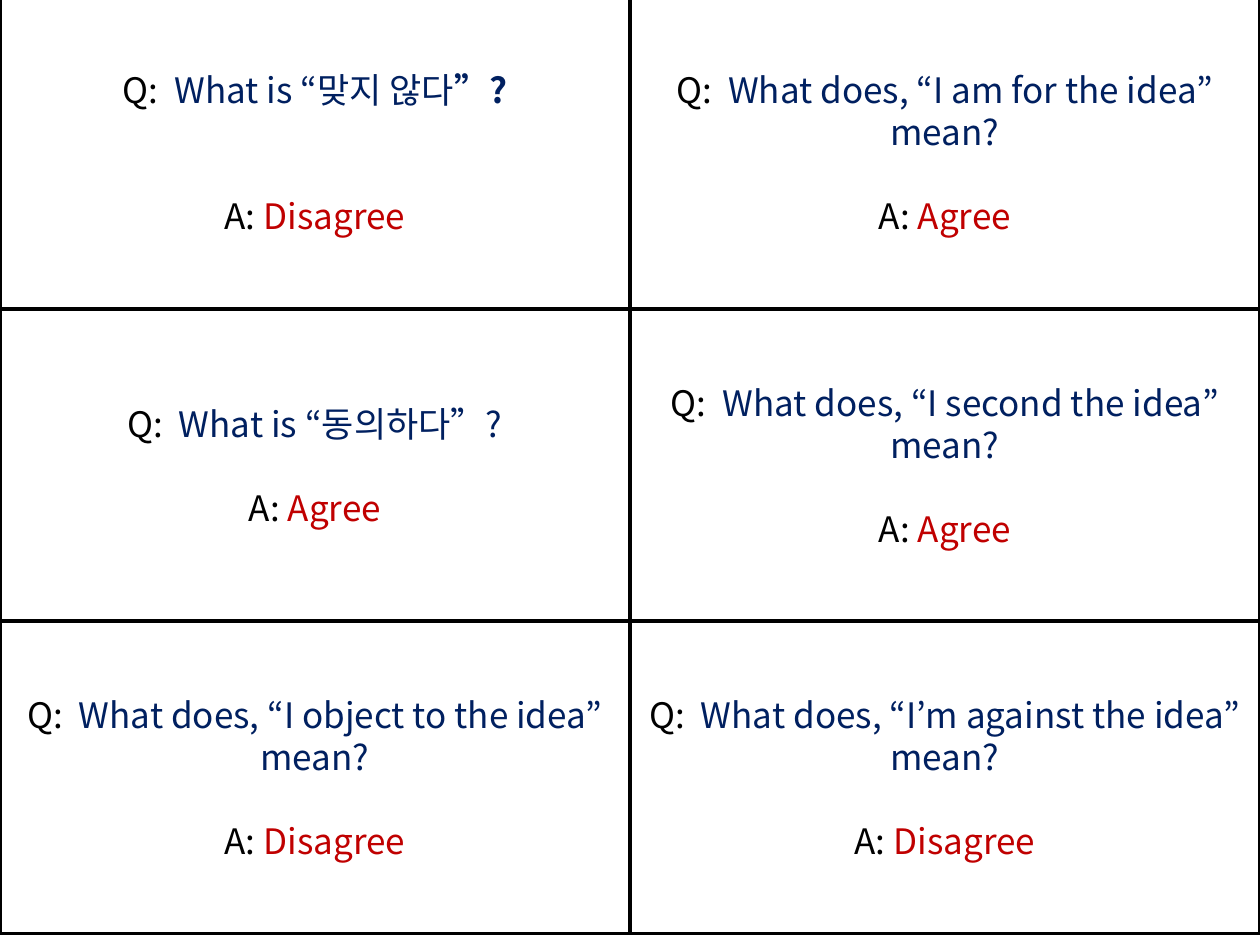
from dataclasses import dataclass

from lxml import etree
from pptx import Presentation
from pptx import util as u
from pptx.dml.color import RGBColor
from pptx.enum import shapes, text
from pptx.oxml import ns


@dataclass(frozen=True)
class Theme:
    font: str = "Noto Sans CJK KR"
    size: int = 20
    pitch: int = 24
    black: str = "000000"
    white: str = "FFFFFF"
    navy: str = "002060"
    red: str = "C00000"


THEME = Theme()
WIDE, HIGH, TOP = 360, 178.5, -2

# Cards by row: question runs (text, bold), answer, empty lines between
CARDS = [
    [([("What is “맞지 않다", False), ("”?", True)], "Disagree", 2),
     ([("What does, “I am for the idea” mean?", False)], "Agree", 1)],
    [([("What is “동의하다”?", False)], "Agree", 1),
     ([("What does, “I second the idea” mean?", False)], "Agree", 1)],
    [([("What does, “I object to the idea” mean?", False)], "Disagree", 1),
     ([("What does, “I’m against the idea” mean?", False)], "Disagree", 1)],
]


def add_run(para, words, color, bold=False):
    run = para.add_run()
    run.text = words
    font = run.font
    font.name, font.size, font.bold = THEME.font, u.Pt(THEME.size), bold
    font.color.rgb = RGBColor.from_string(color)
    # Korean letters take the East Asian font
    east = etree.SubElement(run._r.get_or_add_rPr(), ns.qn("a:ea"))
    east.set("typeface", THEME.font)


def add_line(para, label, parts, color, gap=0):
    para.alignment = text.PP_ALIGN.CENTER
    para.line_spacing = u.Pt(THEME.pitch)
    para.space_before = u.Pt(gap * THEME.pitch)
    add_run(para, label, THEME.black)
    for words, bold in parts:
        add_run(para, words, color, bold)


def add_card(slide, row, col, quest, reply, gap):
    card = slide.shapes.add_shape(
        shapes.MSO_SHAPE.RECTANGLE, u.Pt(col * WIDE), u.Pt(TOP + row * HIGH),
        u.Pt(WIDE), u.Pt(HIGH))
    card.shadow.inherit = False
    card.fill.solid()
    card.fill.fore_color.rgb = RGBColor.from_string(THEME.white)
    card.line.color.rgb = RGBColor.from_string(THEME.black)
    card.line.width = u.Pt(2)
    frame = card.text_frame
    frame.word_wrap = True
    frame.vertical_anchor = text.MSO_ANCHOR.MIDDLE
    add_line(frame.paragraphs[0], "Q:  ", quest, THEME.navy)
    add_line(frame.add_paragraph(), "A: ", [(reply, False)], THEME.red, gap)


def main():
    deck = Presentation()
    deck.slide_width, deck.slide_height = u.Pt(720), u.Pt(540)
    slide = deck.slides.add_slide(deck.slide_layouts[6])
    # Grid of cards, two to a row
    for row, pair in enumerate(CARDS):
        for col, card in enumerate(pair):
            add_card(slide, row, col, *card)
    deck.save("out.pptx")


if __name__ == "__main__":
    main()
